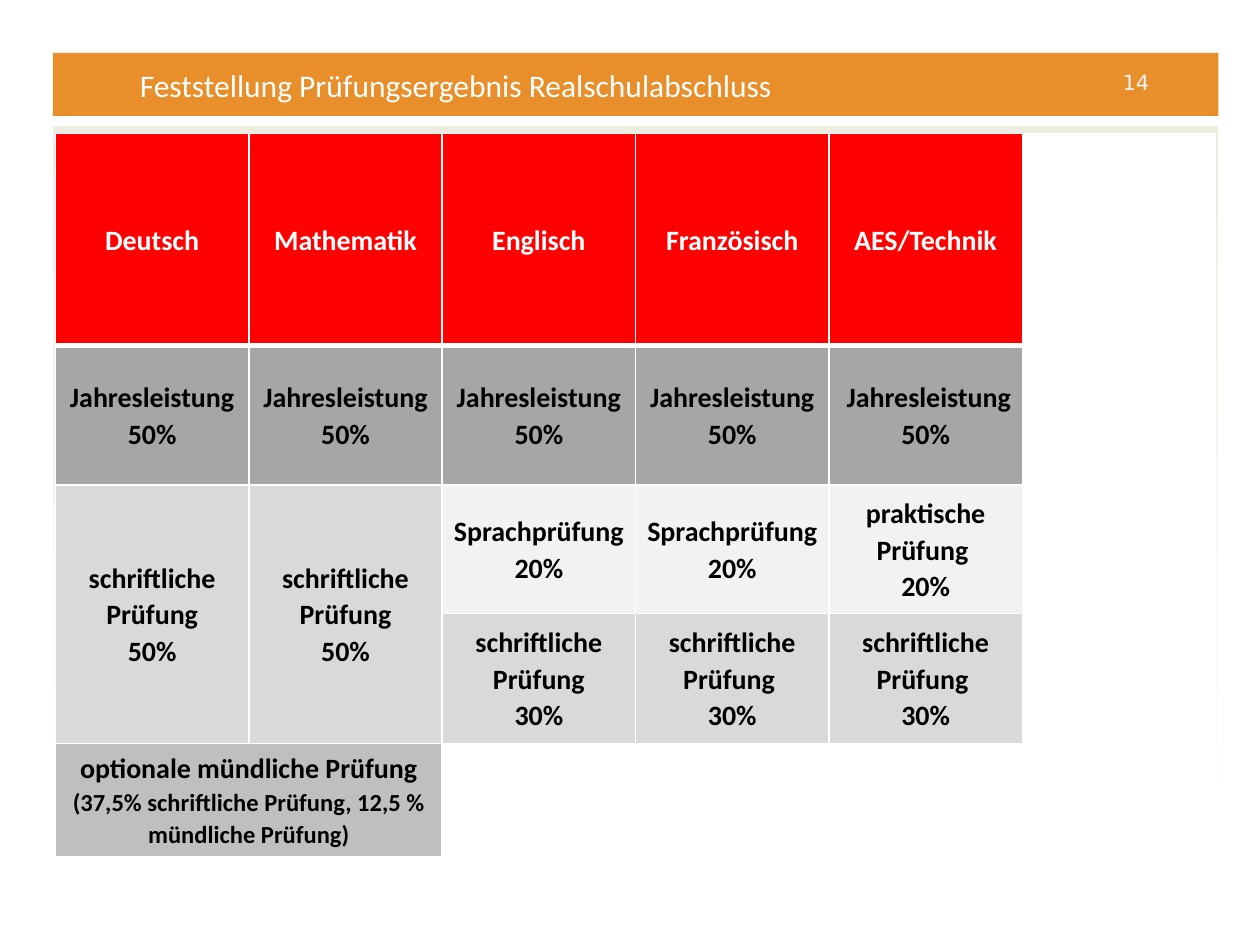
"""Builds the slide on how the Realschulabschluss exam result is determined."""
from lxml import etree
from pptx import Presentation
from pptx.dml.color import RGBColor
from pptx.enum.shapes import MSO_SHAPE as SHAPE
from pptx.enum.text import MSO_ANCHOR as ANCHOR, PP_ALIGN as ALIGN
from pptx.oxml import parse_xml
from pptx.oxml.ns import nsdecls, qn
from pptx.util import Inches, Pt


def rgb(value):
    return RGBColor.from_string(value)


def add_run(p, text, size, color, font="Calibri", bold=False):
    r = p.add_run()
    r.text = text
    r.font.size, r.font.name, r.font.bold = Pt(size), font, bold
    r.font.color.rgb = rgb(color)


prs = Presentation()
prs.slide_width, prs.slide_height = Inches(10), Inches(7.5)
s = prs.slides.add_slide(prs.slide_layouts[5])

bar = s.shapes.add_shape(SHAPE.RECTANGLE, Inches(0.42), Inches(0.42), Inches(9.25), Inches(0.5))
panel = s.shapes.add_shape(SHAPE.RECTANGLE, Inches(0.42), Inches(1), Inches(9.25), Inches(5.63))
for sp in (bar, panel):
    sp.shadow.inherit = False
    sp.line.fill.background()
bar.fill.solid()
bar.fill.fore_color.rgb = rgb("E88E2A")
panel.fill.gradient()
panel.fill.gradient_angle = 270
for stop, color in zip(panel.fill.gradient_stops, ("EEECE1", "FFFFFF")):
    stop.color.rgb = rgb(color)

number = s.shapes.add_textbox(Inches(8.91), Inches(0.5), Inches(0.93), Inches(0.3))
tf = number.text_frame
tf.margin_left = tf.margin_right = 0
add_run(tf.paragraphs[0], "14", 12, "F3F3F3", "DejaVu Sans")

title = s.shapes.title
title.left, title.top, title.width, title.height = Inches(1.01), Inches(0.47), Inches(7.53), Inches(0.4)
title.element.getparent().append(title.element)
tf = title.text_frame
tf.vertical_anchor = ANCHOR.TOP
p = tf.paragraphs[0]
p.alignment = ALIGN.LEFT
add_run(p, "Feststellung Prüfungsergebnis Realschulabschluss", 18, "FFFFFF")

YEAR = ["Jahresleistung", "50%"]
WRITTEN = "schriftliche Prüfung"
SPEAKING = "Sprachprüfung"
rows = [
    [["Deutsch"], ["Mathematik"], ["Englisch"], ["Französisch"], ["AES/Technik"], []],
    [YEAR, YEAR, YEAR, ["Jahresleistung 50%"], [" Jahresleistung 50%"], []],
    [[WRITTEN, "50%"], [WRITTEN, "50%"], [SPEAKING, "20%"], [SPEAKING + " 20%"],
     ["praktische Prüfung ", "20%"], []],
    [[], [], [WRITTEN, "30%"], [WRITTEN + " ", "30%"], [WRITTEN + " ", "30%"], []],
    [["optionale mündliche Prüfung", "(37,5% schriftliche Prüfung, 12,5 % mündliche Prüfung)"],
     [], [], [], [], []],
]
fills = ["FF0000", "A6A6A6", "F2F2F2", "D9D9D9", "BFBFBF"]
heights = [1.68, 1.11, 1.02, 1.03, 0.78]

frame = s.shapes.add_table(5, 6, Inches(0.44), Inches(1.06), Inches(9.21), Inches(sum(heights)))
table = frame.table
for col in table.columns:
    col.width = Inches(9.21 / 6)
for row, height in zip(table.rows, heights):
    row.height = Inches(height)

for i, row in enumerate(rows):
    for j, lines in enumerate(row):
        cell = table.cell(i, j)
        cell.vertical_anchor = ANCHOR.MIDDLE
        cell.margin_left = cell.margin_right = Inches(0.07)
        cell.margin_top = cell.margin_bottom = Inches(0.05)
        cell.fill.solid()
        fill = "D9D9D9" if i == 2 and j < 2 else fills[i]
        cell.fill.fore_color.rgb = rgb(fill if lines else "FFFFFF")
        for k, text in enumerate(lines):
            tf = cell.text_frame
            p = tf.paragraphs[0] if k == 0 else tf.add_paragraph()
            p.alignment, p.line_spacing = ALIGN.CENTER, 1.07
            size = 14 if i == 4 and k == 1 else 16
            add_run(p, text, size, "000000" if i else "FFFFFF", bold=True)
        tcPr = cell._tc.get_or_add_tcPr()
        for k, side in enumerate("LRTB"):
            thick = (i, side) in ((0, "B"), (1, "T"))
            ln = parse_xml(f'<a:ln{side} {nsdecls("a")} w="{Pt(3 if thick else 0.96)}"/>')
            line_fill = etree.SubElement(ln, qn("a:solidFill"))
            etree.SubElement(line_fill, qn("a:srgbClr"), val="FFFFFF")
            tcPr.insert(k, ln)

for first, last in (((2, 0), (3, 0)), ((2, 1), (3, 1)), ((2, 5), (3, 5)),
                    ((4, 0), (4, 1)), ((4, 2), (4, 5))):
    table.cell(*first).merge(table.cell(*last))

prs.save("out.pptx")
